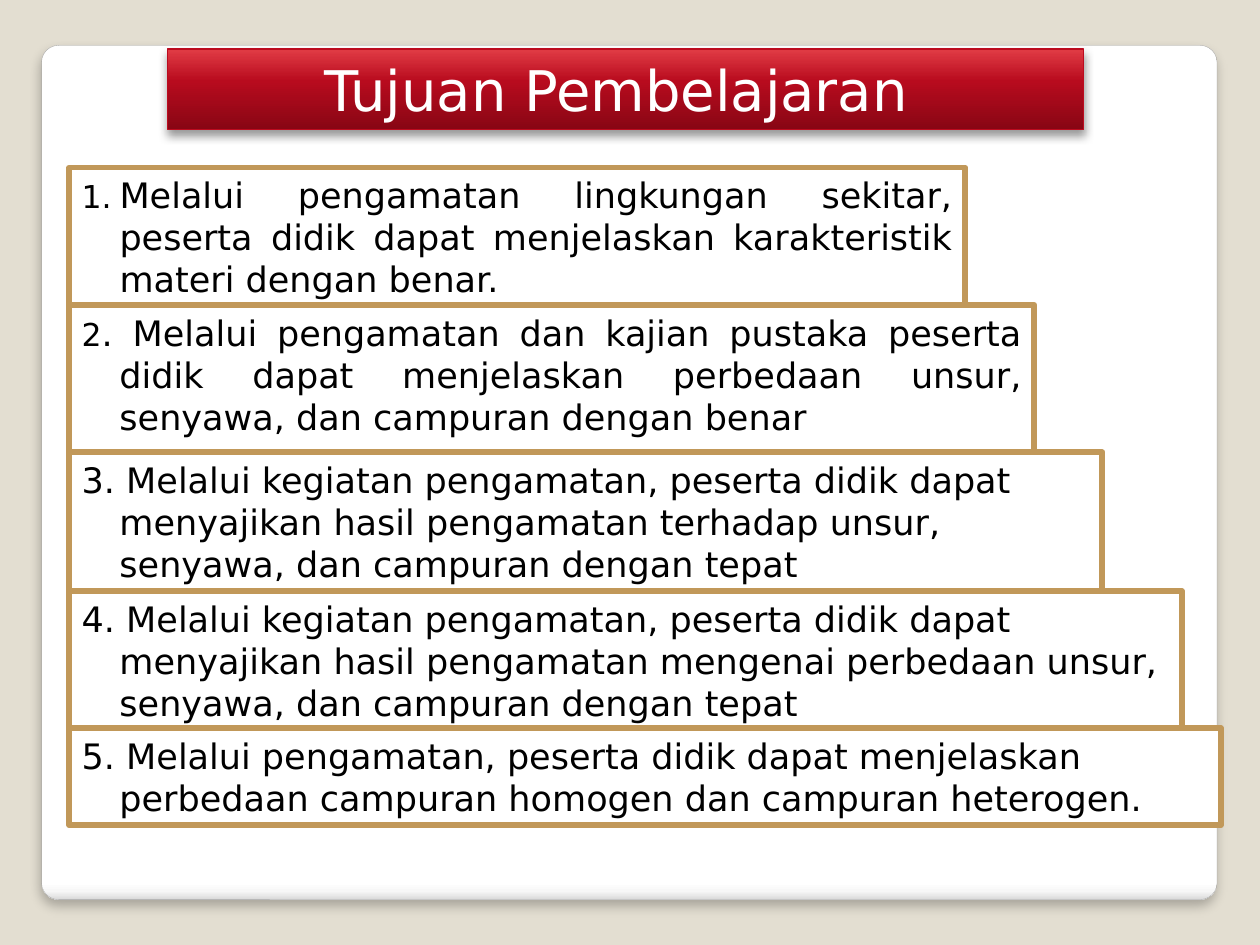
from lxml.etree import SubElement
from pptx import Presentation
from pptx.dml.color import RGBColor as RGB
from pptx.enum.shapes import MSO_SHAPE as Preset
from pptx.enum.text import MSO_ANCHOR as Anchor, PP_ALIGN as Align
from pptx.oxml.ns import qn
from pptx.util import Inches, Pt

THEME = {
    "font": "DejaVu Sans",
    "backdrop": "E3DED1", "paper": "FFFFFF", "ink": "000000",
    "goal_line": "C19859", "card_line": "A4A4A4", "banner_line": "BC0B1F",
    "card_stops": [(0, "FFFFFF"), (98, "FFFFFF"), (99, "F7F7F7"), (100, "DADADA")],
    "banner_stops": [(0, "870614"), (60, "B80B1E"), (100, "E13C45")],
    "title_size": 32, "goal_size": 20, "number_size": 18,
}

deck = Presentation()
deck.slide_width, deck.slide_height = Inches(10), Inches(7.5)
COL, ROW = deck.slide_width / 100, deck.slide_height / 75
slide = deck.slides.add_slide(deck.slide_layouts[6])
slide.background.fill.solid()
slide.background.fill.fore_color.rgb = RGB.from_string(THEME["backdrop"])


def add_panel(box, line, weight, preset=Preset.RECTANGLE, stops=None, angle=90, shadow=None):
    """Box is in grid units; shadow is (opacity %, blur pt, distance pt), cast downwards."""
    left, top, width, height = box
    panel = slide.shapes.add_shape(preset, int(left * COL), int(top * ROW),
                                   int(width * COL), int(height * ROW))
    panel.line.color.rgb = RGB.from_string(line)
    panel.line.width = Pt(weight)
    panel.shadow.inherit = False
    properties = panel.fill._xPr
    if stops:
        panel.fill.gradient()
        stop_list = properties.find(".//" + qn("a:gsLst"))
        for old_stop in list(stop_list):
            stop_list.remove(old_stop)
        for position, color in stops:
            stop = SubElement(stop_list, qn("a:gs"), pos=str(position * 1000))
            SubElement(stop, qn("a:srgbClr"), val=color)
        properties.find(".//" + qn("a:lin")).set("ang", str(angle * 60000))
    else:
        panel.fill.solid()
        panel.fill.fore_color.rgb = RGB.from_string(THEME["paper"])
    if shadow:
        opacity, blur, distance = shadow
        cast = SubElement(properties.find(qn("a:effectLst")), qn("a:outerShdw"),
                          blurRad=str(Pt(blur)), dist=str(Pt(distance)),
                          dir=str(90 * 60000), algn="t", rotWithShape="0")
        tint = SubElement(cast, qn("a:srgbClr"), val=THEME["ink"])
        SubElement(tint, qn("a:alpha"), val=str(opacity * 1000))
    return panel


def write(panel, *runs, color=THEME["ink"], align=Align.LEFT, hanging=0):
    """Each run is (text, size); hanging is the indent in columns."""
    frame = panel.text_frame
    frame.word_wrap = True
    frame.vertical_anchor = Anchor.TOP
    paragraph = frame.paragraphs[0]
    paragraph.alignment = align
    if hanging:
        indent = int(hanging * COL)
        layout = paragraph._p.get_or_add_pPr()
        layout.set("marL", str(indent))
        layout.set("indent", str(-indent))
    for text, size in runs:
        run = paragraph.add_run()
        run.text = text
        run.font.name = THEME["font"]
        run.font.size = Pt(size)
        run.font.color.rgb = RGB.from_string(color)


card = add_panel((3.3, 3.6, 93.3, 67.8), THEME["card_line"], 0.16, Preset.ROUNDED_RECTANGLE,
                 THEME["card_stops"], shadow=(25, 6, 4))
card.adjustments[0] = 0.02

banner = add_panel((13.3, 3.9, 72.7, 6.4), THEME["banner_line"], 0.75,
                   stops=THEME["banner_stops"], angle=270, shadow=(40, 5.2, 3))
write(banner, ("Tujuan Pembelajaran ", THEME["title_size"]),
      color=THEME["paper"], align=Align.CENTER)

# top row, width, height, alignment, small lead, text
goals = [
    (13.3, 71.1, 11.1, Align.JUSTIFY, "1.\t",
     "Melalui pengamatan lingkungan sekitar, peserta didik dapat menjelaskan "
     "karakteristik materi dengan benar."),
    (24.2, 76.6, 14.1, Align.JUSTIFY, "2",
     ". Melalui pengamatan dan kajian pustaka peserta didik dapat menjelaskan "
     "perbedaan unsur, senyawa, dan campuran dengan benar"),
    (35.9, 82, 11.1, Align.LEFT, "",
     "3. Melalui kegiatan pengamatan, peserta didik dapat menyajikan hasil "
     "pengamatan terhadap unsur, senyawa, dan campuran dengan tepat"),
    (46.9, 88.3, 11.1, Align.LEFT, "",
     "4. Melalui kegiatan pengamatan, peserta didik dapat menyajikan hasil "
     "pengamatan mengenai perbedaan unsur, senyawa, dan campuran dengan tepat"),
    (57.8, 91.4, 7.7, Align.LEFT, "",
     "5. Melalui pengamatan, peserta didik dapat menjelaskan perbedaan campuran "
     "homogen dan campuran heterogen."),
]
for top, width, height, align, lead, sentence in goals:
    goal = add_panel((5.5, top, width, height), THEME["goal_line"], 3.35)
    runs = [(lead, THEME["number_size"])] if lead else []
    write(goal, *runs, (sentence, THEME["goal_size"]), align=align, hanging=3)

deck.save("out.pptx")
